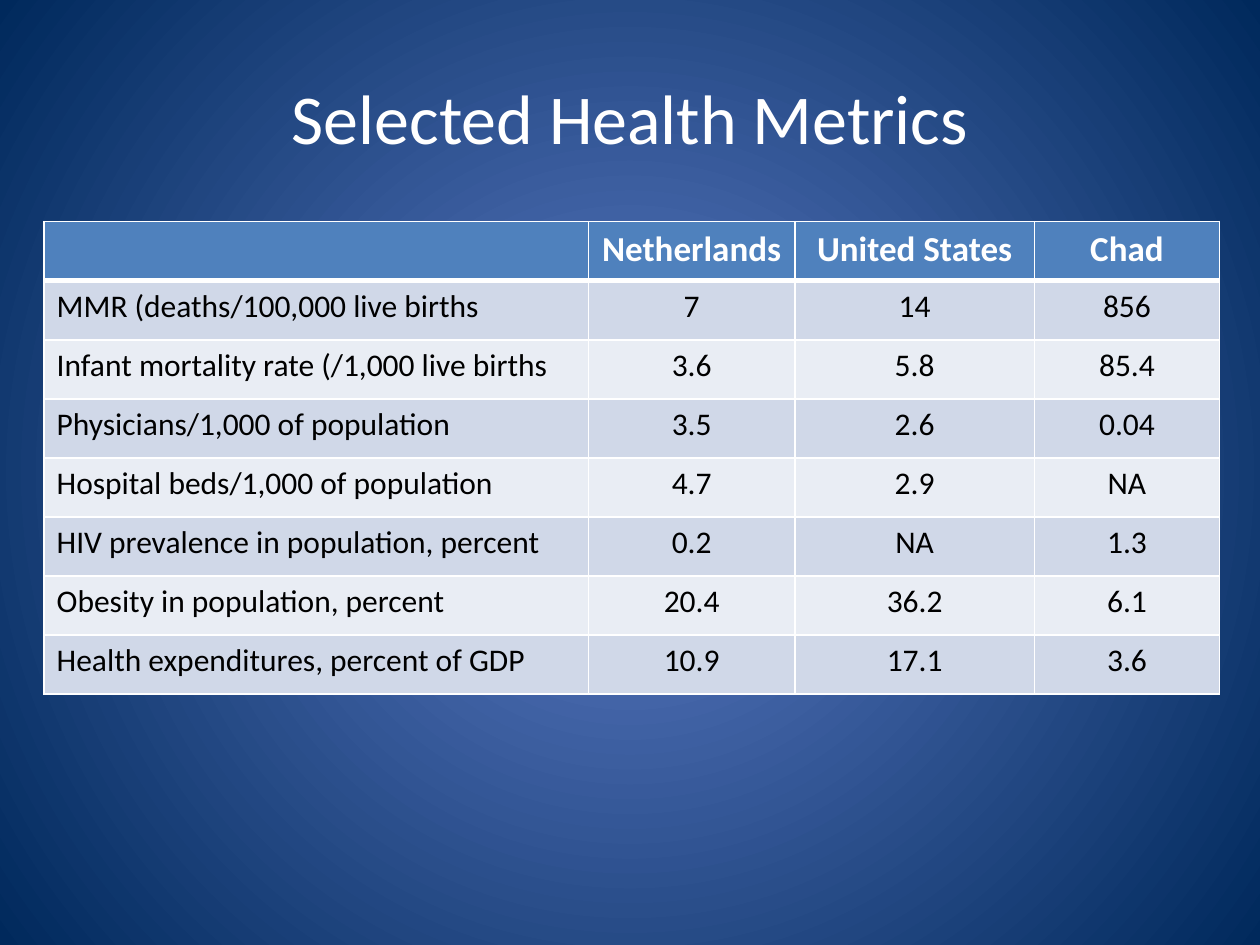
from lxml import etree
from pptx import Presentation
from pptx.dml.color import RGBColor
from pptx.enum.text import MSO_ANCHOR, PP_ALIGN
from pptx.oxml.ns import qn
from pptx.util import Inches, Pt

CENTER, LEFT = PP_ALIGN.CENTER, PP_ALIGN.LEFT
MIDDLE = MSO_ANCHOR.MIDDLE
FONT = "Calibri"
WHITE, BLACK = "FFFFFF", "000000"
HEADER_FILL = "4F81BD"
BAND_FILLS = ("E9EDF4", "D0D8E8")
BACKGROUND = ("5E7CC5", "00295C")

COLUMN_WIDTHS = (4.32, 1.64, 1.9, 1.47)
METRICS = (
    ("", "Netherlands", "United States", "Chad"),
    ("MMR (deaths/100,000 live births", "7", "14", "856"),
    ("Infant mortality rate (/1,000 live births", "3.6", "5.8", "85.4"),
    ("Physicians/1,000 of population", "3.5", "2.6", "0.04"),
    ("Hospital beds/1,000 of population", "4.7", "2.9", "NA"),
    ("HIV prevalence in population, percent", "0.2", "NA", "1.3"),
    ("Obesity in population, percent", "20.4", "36.2", "6.1"),
    ("Health expenditures, percent of GDP", "10.9", "17.1", "3.6"),
)


def rgb(value):
    return RGBColor.from_string(value)


def set_text(tf, text, size, color, align, bold=False):
    tf.text = text
    p = tf.paragraphs[0]
    p.alignment = align
    p.font.size = Pt(size)
    for r in p.runs:
        r.font.name = FONT
        r.font.size = Pt(size)
        r.font.bold = bold
        r.font.color.rgb = rgb(color)


def set_background(s):
    fill = s.background.fill
    fill.gradient()
    for stop, color, position in zip(fill.gradient_stops, BACKGROUND, (0, 1)):
        stop.color.rgb = rgb(color)
        stop.position = position
    grad = next(s.element.iter(qn("a:gradFill")))
    lin = grad.find(qn("a:lin"))
    radial = etree.Element(qn("a:path"), path="circle")
    etree.SubElement(radial, qn("a:fillToRect"),
                     l="50000", t="50000", r="50000", b="50000")
    grad.replace(lin, radial)


def add_title(s, left, top, width, height):
    sp = s.shapes.add_textbox(left, top, width, height)
    tf = sp.text_frame
    tf.word_wrap = True
    tf.vertical_anchor = MIDDLE
    set_text(tf, "Selected Health Metrics", 40, WHITE, CENTER)


def set_borders(cell, top, bottom):
    tc_pr = cell._tc.get_or_add_tcPr()
    for side, width in (("L", 1), ("R", 1), ("T", top), ("B", bottom)):
        ln = etree.SubElement(tc_pr, qn(f"a:ln{side}"), w=str(Pt(width)))
        solid = etree.SubElement(ln, qn("a:solidFill"))
        etree.SubElement(solid, qn("a:srgbClr"), val=WHITE)


def add_metrics_table(s, left, top, width, height):
    table = s.shapes.add_table(len(METRICS), len(COLUMN_WIDTHS),
                               left, top, width, height).table
    for column, column_width in zip(table.columns, COLUMN_WIDTHS):
        column.width = Inches(column_width)
    for i, values in enumerate(METRICS):
        header = i == 0
        table.rows[i].height = height // len(METRICS)
        for j, value in enumerate(values):
            cell = table.cell(i, j)
            set_borders(cell, 3 if i == 1 else 1, 3 if header else 1)
            cell.fill.solid()
            cell.fill.fore_color.rgb = rgb(HEADER_FILL if header else BAND_FILLS[i % 2])
            set_text(cell.text_frame, value, 20 if header else 18,
                     WHITE if header else BLACK,
                     CENTER if header or j else LEFT, header)


def main():
    prs = Presentation()
    prs.slide_width, prs.slide_height = Inches(10), Inches(7.5)
    s = prs.slides.add_slide(prs.slide_layouts[6])
    set_background(s)
    add_title(s, Inches(0.5), Inches(0.3), Inches(9), Inches(1.25))
    add_metrics_table(s, Inches(0.35), Inches(1.76), Inches(9.33), Inches(3.75))
    prs.save("out.pptx")


if __name__ == "__main__":
    main()
